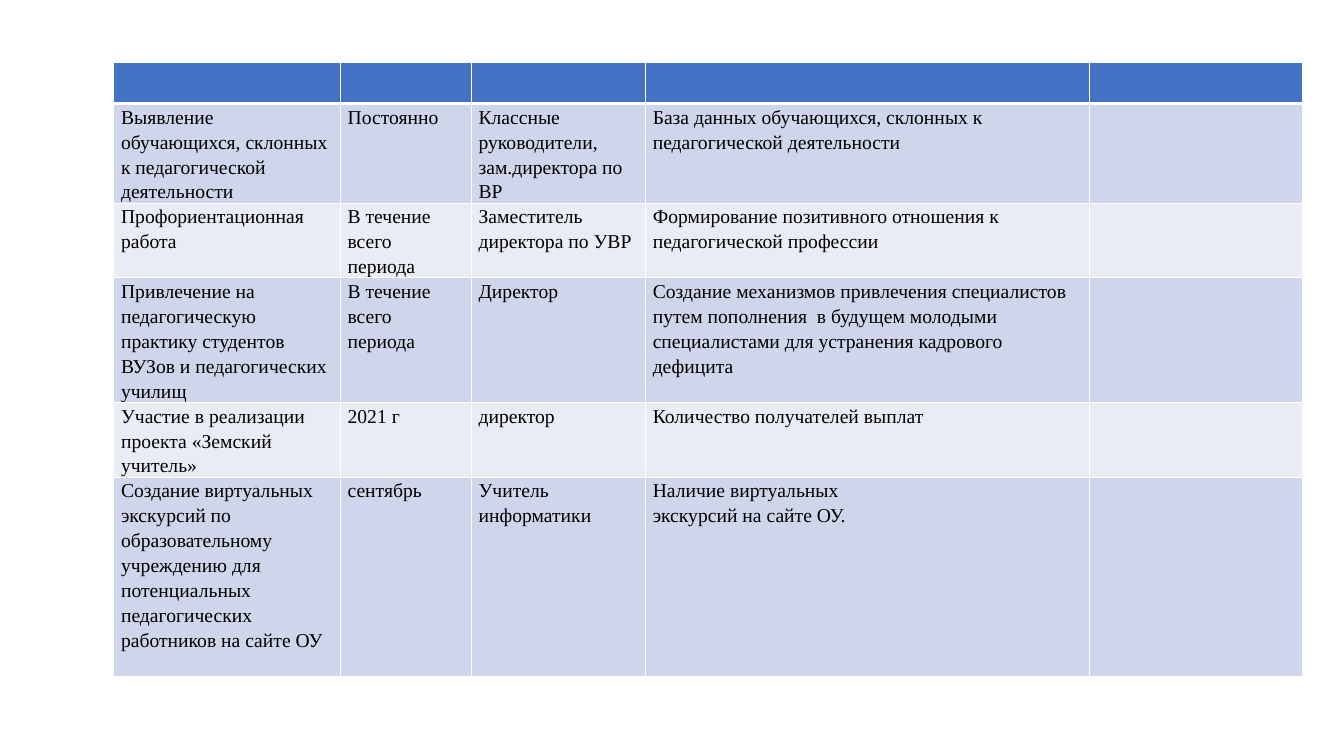
import pptx
import pptx.dml.color
import pptx.oxml
import pptx.oxml.ns
import pptx.util
from pptx.util import Cm

WHITE = pptx.dml.color.RGBColor(0xFF, 0xFF, 0xFF)
BLACK = pptx.dml.color.RGBColor(0x00, 0x00, 0x00)
HEADER_BLUE = pptx.dml.color.RGBColor(0x44, 0x72, 0xC4)
BAND_DARK = pptx.dml.color.RGBColor(0xCF, 0xD5, 0xEA)
BAND_LIGHT = pptx.dml.color.RGBColor(0xE9, 0xEB, 0xF5)

COLUMN_WIDTHS = [5.71, 3.3, 4.39, 11.18, 5.38]
ROW_HEIGHTS = [1.03, 2.51, 1.88, 3.14, 1.88, 5.02]

# Activity, term, person in charge, expected result; a line break starts a paragraph.
ACTIVITIES = [
    ("Выявление обучающихся, склонных к педагогической деятельности",
     "Постоянно",
     "Классные руководители, зам.директора по ВР",
     "База данных обучающихся, склонных к педагогической деятельности"),
    ("Профориентационная работа",
     "В течение всего периода",
     "Заместитель директора по УВР",
     "Формирование позитивного отношения к педагогической профессии"),
    ("Привлечение на педагогическую практику студентов ВУЗов и педагогических училищ",
     "В течение всего периода",
     "Директор",
     "Создание механизмов привлечения специалистов путем пополнения  в будущем "
     "молодыми специалистами для устранения кадрового дефицита"),
    ("Участие в реализации проекта «Земский учитель»",
     "2021 г",
     "директор",
     "Количество получателей выплат"),
    ("Создание виртуальных экскурсий по\nобразовательному учреждению для\n"
     "потенциальных педагогических\nработников на сайте ОУ",
     "сентябрь",
     "Учитель информатики",
     "Наличие виртуальных\nэкскурсий на сайте ОУ."),
]


def set_borders(cell, bottom_width):
    """Draw white borders, 1 pt except for the given bottom width in points."""
    properties = cell._tc.get_or_add_tcPr()
    for side, width in (("L", 1), ("R", 1), ("T", 1), ("B", bottom_width)):
        properties.append(pptx.oxml.parse_xml(
            f'<a:ln{side} {pptx.oxml.ns.nsdecls("a")} w="{pptx.util.Pt(width)}">'
            f'<a:solidFill><a:srgbClr val="{WHITE}"/></a:solidFill></a:ln{side}>'))


def paint_cell(cell, color, bottom_width=1):
    set_borders(cell, bottom_width)
    cell.fill.solid()
    cell.fill.fore_color.rgb = color


def write_cell(cell, text):
    cell.margin_left = cell.margin_right = Cm(0.18)
    cell.margin_top = cell.margin_bottom = 0
    cell.text = text
    for paragraph in cell.text_frame.paragraphs:
        paragraph.line_spacing = 1.15
        paragraph.font.name = "Times New Roman"
        paragraph.font.size = pptx.util.Pt(14)
        paragraph.font.color.rgb = BLACK


def add_activity_plan(slide, left, top):
    plan = slide.shapes.add_table(
        len(ROW_HEIGHTS), len(COLUMN_WIDTHS), left, top,
        Cm(sum(COLUMN_WIDTHS)), Cm(sum(ROW_HEIGHTS))).table
    for column, width in zip(plan.columns, COLUMN_WIDTHS):
        column.width = Cm(width)
    for row, height in zip(plan.rows, ROW_HEIGHTS):
        row.height = Cm(height)

    header, *activity_rows = plan.rows
    for cell in header.cells:
        paint_cell(cell, HEADER_BLUE, bottom_width=3)
    for index, (row, activity) in enumerate(zip(activity_rows, ACTIVITIES)):
        for cell in row.cells:
            paint_cell(cell, BAND_LIGHT if index % 2 else BAND_DARK)
        for cell, text in zip(row.cells, activity):
            write_cell(cell, text)


def main():
    presentation = pptx.Presentation()
    presentation.slide_width = Cm(33.87)
    presentation.slide_height = Cm(19.05)
    slide = presentation.slides.add_slide(presentation.slide_layouts[6])
    add_activity_plan(slide, Cm(2.87), Cm(1.58))
    presentation.save("out.pptx")


if __name__ == "__main__":
    main()
